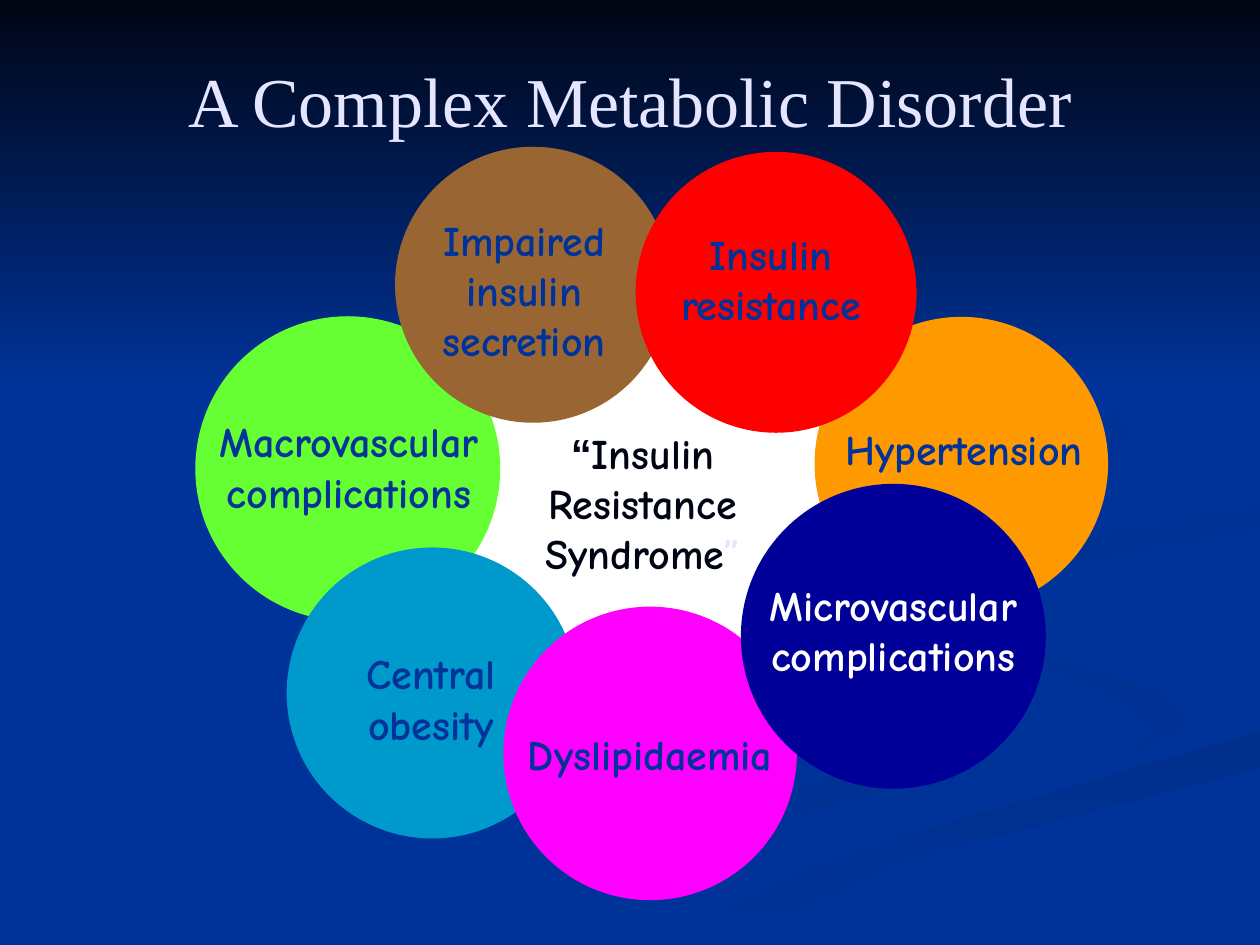
from pptx import Presentation
from pptx.dml.color import RGBColor
from pptx.enum.shapes import MSO_SHAPE as Shape
from pptx.enum.text import MSO_ANCHOR as Anchor, PP_ALIGN as Align
from pptx.util import Inches, Pt

NAVY, INK, PALE, WHITE = "003399", "000514", "E5E5FF", "FFFFFF"

# Ribbons behind the discs: fill colours, angle, outline in inches
RIBBONS = [
    ((NAVY, "003193"), 0, [
        (7.8, 5.5), (6.3, 5), (5.75, 4.6), (6, 4.95), (7.5, 5.4), (7.85, 5.7),
        (6.5, 6.2), (4.6, 6.75), (3, 7.5), (3.6, 7.5), (5.3, 6.75), (7.7, 6.1),
        (8, 5.8)]),
    ((NAVY, "003193"), 45, [
        (9.43, 5.7), (9.2, 5.47), (7.6, 5), (7.24, 4.64), (7.5, 5.05),
        (8.8, 5.5), (9.17, 5.8), (8.94, 6.05), (9.35, 5.88)]),
    (("002F8C", NAVY), 90, [
        (5.03, 7.5), (5.7, 7.5), (7.2, 6.82), (10, 6.1), (10, 5.8),
        (7.65, 6.47), (6.3, 6.93)]),
    ((NAVY,), 0, [
        (7.25, 4.64), (7.6, 5), (9.2, 5.47), (9.43, 5.75), (8.9, 6.05),
        (6.6, 6.7), (4.77, 7.5), (5.1, 7.5), (6.6, 6.8), (10, 5.8), (10, 5.38),
        (8.5, 5.03), (7.82, 4.6), (8.35, 4.3), (10, 4.02), (10, 3.87),
        (7.7, 4.27)]),
    (("003091", NAVY), 45, [
        (7.81, 4.6), (7.9, 4.78), (8.26, 4.96), (8.05, 4.74), (8.43, 4.48),
        (10, 4.2), (10, 4.02), (8.35, 4.3)]),
    (("002F8E", NAVY), 45, [
        (6.83, 4.3), (8.25, 4.02), (8.8, 3.75), (8.94, 3.44), (8.75, 3),
        (8.2, 2.6), (7.62, 2.33), (8.46, 2.79), (8.85, 3.2), (8.8, 3.56),
        (8.3, 3.82), (6.25, 4.26), (5.77, 4.62), (6.22, 5), (5.94, 4.7),
        (6.24, 4.44)]),
    ((INK, NAVY), 90, [(0, 0), (0, 3.08), (10, 3.08), (10, 0)]),
]

# Disc centre and size, label centre, fill, text colour, lines
DISCS = [
    (2.76, 3.72, 2.42, 2.77, 3.7, "66FF33", NAVY,
     "Macrovascular", "complications"),
    (4.23, 2.26, 2.19, 4.16, 2.3, "996633", NAVY,
     "Impaired", "insulin", "secretion"),
    (3.43, 5.5, 2.31, 3.42, 5.54, "0099CC", NAVY, "Central", "obesity"),
    (7.63, 3.68, 2.33, 7.65, 3.56, "FF9900", NAVY, "Hypertension"),
    (5.16, 5.98, 2.33, 5.16, 5.98, "FF00FF", NAVY, "Dyslipidaemia"),
    (7.09, 5.05, 2.42, 7.09, 5, "000099", WHITE,
     "Microvascular", "complications"),
    (6.16, 2.32, 2.23, 6.12, 2.21, "FF0000", NAVY, "Insulin", "resistance"),
]


def color(code):
    return RGBColor.from_string(code)


def around(x, y, width, height):
    """Left, top, width and height of a box centred on x, y."""
    return [Inches(n) for n in (x - width / 2, y - height / 2, width, height)]


class Deck:
    font, size = "Comic Neue", 24

    def __init__(self):
        self.prs = Presentation()
        self.prs.slide_width, self.prs.slide_height = Inches(10), Inches(7.5)
        self.slide = self.prs.slides.add_slide(self.prs.slide_layouts[5])
        self.shapes = self.slide.shapes

    def back(self, code):
        fill = self.slide.background.fill
        fill.solid()
        fill.fore_color.rgb = color(code)

    def paint(self, shape, codes, angle=0):
        """Fill with one colour, or a gradient turned clockwise by angle."""
        if len(codes) == 1:
            shape.fill.solid()
            shape.fill.fore_color.rgb = color(codes[0])
        else:
            shape.fill.gradient()
            shape.fill.gradient_angle = -angle % 360
            for stop, code in zip(shape.fill.gradient_stops, codes):
                stop.color.rgb = color(code)
        shape.line.fill.background()
        shape.shadow.inherit = False

    def ribbon(self, codes, angle, points):
        start, *rest = [(Inches(x), Inches(y)) for x, y in points]
        pen = self.shapes.build_freeform(*start)
        pen.add_line_segments(rest, close=True)
        self.paint(pen.convert_to_shape(), codes, angle)

    def disc(self, x, y, size, code):
        box = around(x, y, size, size)
        self.paint(self.shapes.add_shape(Shape.OVAL, *box), [code])

    def run(self, para, text, code, font=None, size=None, bold=True):
        run = para.add_run()
        run.text = text
        run.font.name = font or self.font
        run.font.size = Pt(size or self.size)
        run.font.bold = bold
        run.font.color.rgb = color(code)

    def label(self, x, y, lines):
        """Centre lines of runs; each run is text, colour and maybe font."""
        box = around(x, y, 2.5, 0.37 + 0.4 * len(lines))
        frame = self.shapes.add_textbox(*box).text_frame
        frame.word_wrap = True
        frame.vertical_anchor = Anchor.MIDDLE
        for i, runs in enumerate(lines):
            para = frame.add_paragraph() if i else frame.paragraphs[0]
            para.alignment = Align.CENTER
            for run in runs:
                self.run(para, *run)

    def title(self, box, text):
        """Place the title in front of what is drawn so far."""
        head = self.shapes.title
        head.left, head.top, head.width, head.height = map(Inches, box)
        head.text_frame.vertical_anchor = Anchor.MIDDLE
        para = head.text_frame.paragraphs[0]
        para.alignment = Align.CENTER
        self.run(para, text, PALE, "Times New Roman", 40, False)
        self.shapes._spTree.append(head._element)


def main():
    deck = Deck()
    deck.back(NAVY)
    for ribbon in RIBBONS:
        deck.ribbon(*ribbon)
    deck.title((0.75, 0.33, 8.5, 0.92), "A Complex Metabolic Disorder")
    deck.disc(5.17, 4.13, 3.08, WHITE)
    for x, y, size, text_x, text_y, fill, code, *lines in DISCS:
        deck.disc(x, y, size, fill)
        deck.label(text_x, text_y, [[(line, code)] for line in lines])
    deck.label(5.1, 3.99, [
        [("“", INK, "Arial"), ("Insulin", INK)],
        [("Resistance", INK)],
        [("Syndrome", INK), ("”", PALE)],
    ])
    deck.prs.save("out.pptx")


if __name__ == "__main__":
    main()
